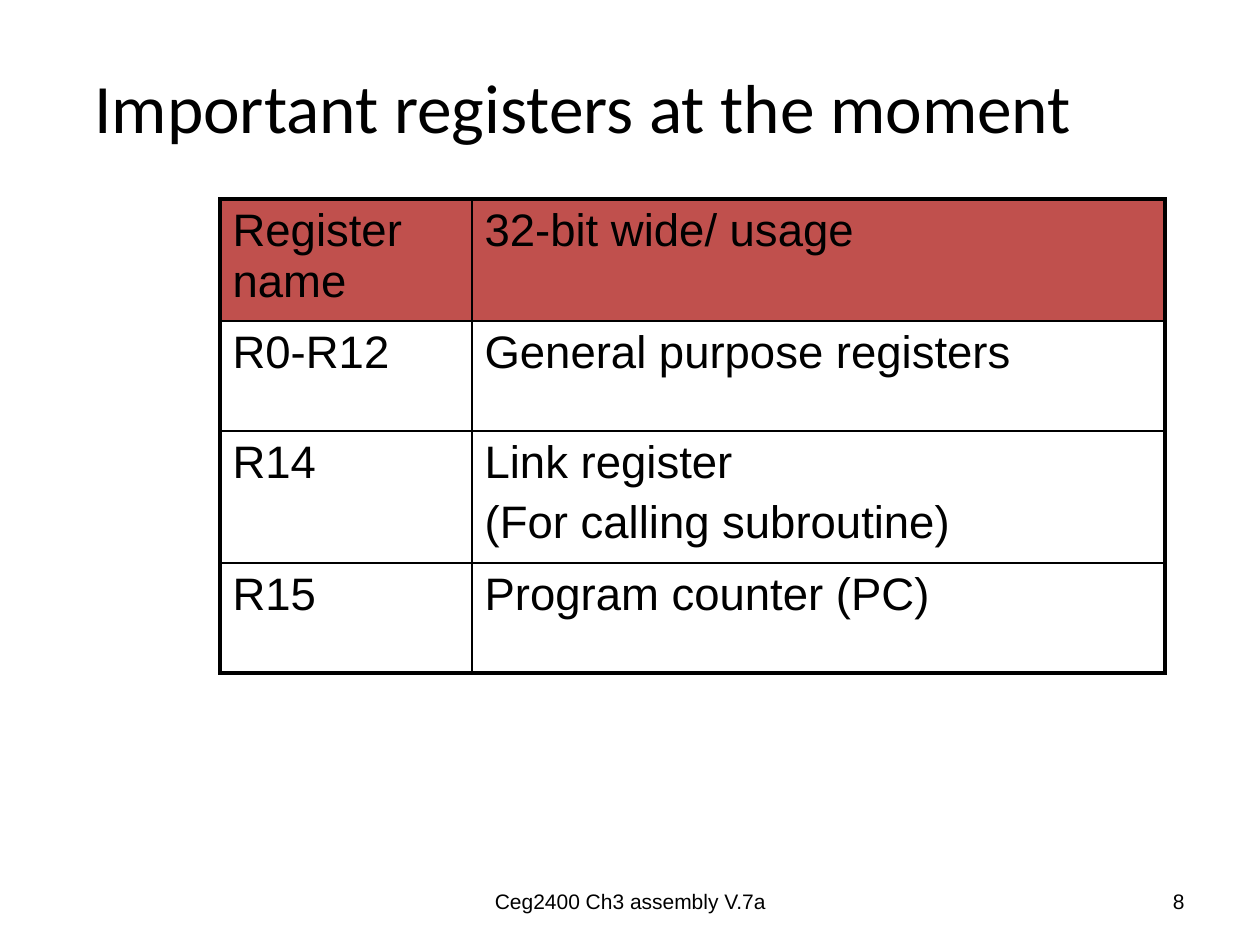
from lxml import etree
from pptx import Presentation
from pptx.dml.color import RGBColor
from pptx.enum.text import MSO_ANCHOR, PP_ALIGN
from pptx.oxml.ns import qn
from pptx.util import Emu, Pt

CENTER, RIGHT, LEFT = PP_ALIGN.CENTER, PP_ALIGN.RIGHT, PP_ALIGN.LEFT
MIDDLE, TOP = MSO_ANCHOR.MIDDLE, MSO_ANCHOR.TOP
COLORS = {"ink": "000000", "header": "C0504D"}

LABELS = [
    ("Important registers at the moment", (63, 16, 1040, 179), "Calibri", 39.6, CENTER),
    ("Ceg2400 Ch3 assembly V.7a", (431, 876, 399, 50), "Arial", 12, CENTER),
    ("8", (903, 876, 294, 50), "Arial", 12, RIGHT),
]
REGISTERS = [
    ("Register name", "32-bit wide/ usage"),
    ("R0-R12", "General purpose registers"),
    ("R14", "Link register\n(For calling subroutine)"),
    ("R15", "Program counter (PC)"),
]
TABLE_LEFT, TABLE_TOP = 220, 199
COLUMN_WIDTHS = [252, 693]
ROW_HEIGHTS = [122, 110, 132, 110]
OUTER, INNER = 2.25, 1


def px(length):
    return Emu(round(length * 914400 / 126))


def write(frame, text, font, size, align, gap=0):
    frame.text = text
    for index, paragraph in enumerate(frame.paragraphs):
        paragraph.alignment = align
        if index:
            paragraph.space_before = Pt(gap)
        for run in paragraph.runs:
            for name, value in {"name": font, "size": Pt(size)}.items():
                setattr(run.font, name, value)
            run.font.color.rgb = RGBColor.from_string(COLORS["ink"])


def add_borders(cell, widths):
    properties = cell._tc.get_or_add_tcPr()
    for side, width in widths.items():
        line = etree.SubElement(properties, qn(f"a:ln{side}"), w=str(Pt(width)))
        fill = etree.SubElement(line, qn("a:solidFill"))
        etree.SubElement(fill, qn("a:srgbClr"), val=COLORS["ink"])


def add_label(slide, text, box, font, size, align):
    frame = slide.shapes.add_textbox(*map(px, box)).text_frame
    for name, value in {"word_wrap": True, "vertical_anchor": MIDDLE}.items():
        setattr(frame, name, value)
    write(frame, text, font, size, align)


def add_registers(slide):
    row_count, column_count = len(ROW_HEIGHTS), len(COLUMN_WIDTHS)
    box = (TABLE_LEFT, TABLE_TOP, sum(COLUMN_WIDTHS), sum(ROW_HEIGHTS))
    table = slide.shapes.add_table(row_count, column_count, *map(px, box)).table
    for column, width in zip(table.columns, COLUMN_WIDTHS):
        column.width = px(width)
    for r, (row, height) in enumerate(zip(table.rows, ROW_HEIGHTS)):
        row.height = px(height)
        for c, cell in enumerate(row.cells):
            cell.vertical_anchor = TOP
            write(cell.text_frame, REGISTERS[r][c], "Arial", 26, LEFT, gap=5.2)
            edges = {"L": c == 0, "R": c == column_count - 1,
                     "T": r == 0, "B": r == row_count - 1}
            add_borders(cell, {side: OUTER if edge else INNER for side, edge in edges.items()})
            if r == 0:
                cell.fill.solid()
                cell.fill.fore_color.rgb = RGBColor.from_string(COLORS["header"])
            else:
                cell.fill.background()


def main():
    deck = Presentation()
    deck.slide_width, deck.slide_height = px(1260), px(945)
    slide = deck.slides.add_slide(deck.slide_layouts[6])
    for label in LABELS:
        add_label(slide, *label)
    add_registers(slide)
    deck.save("out.pptx")


if __name__ == "__main__":
    main()
